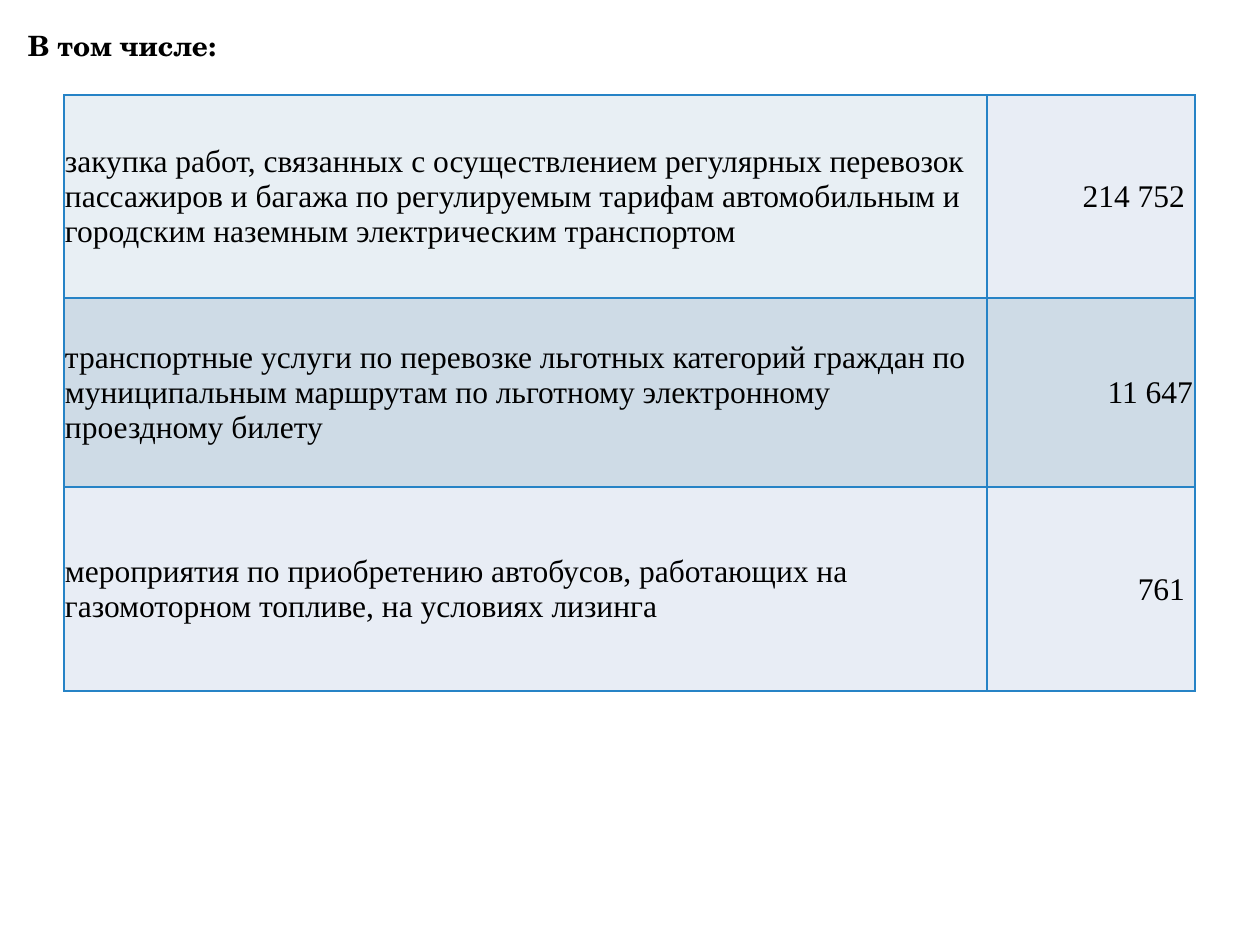
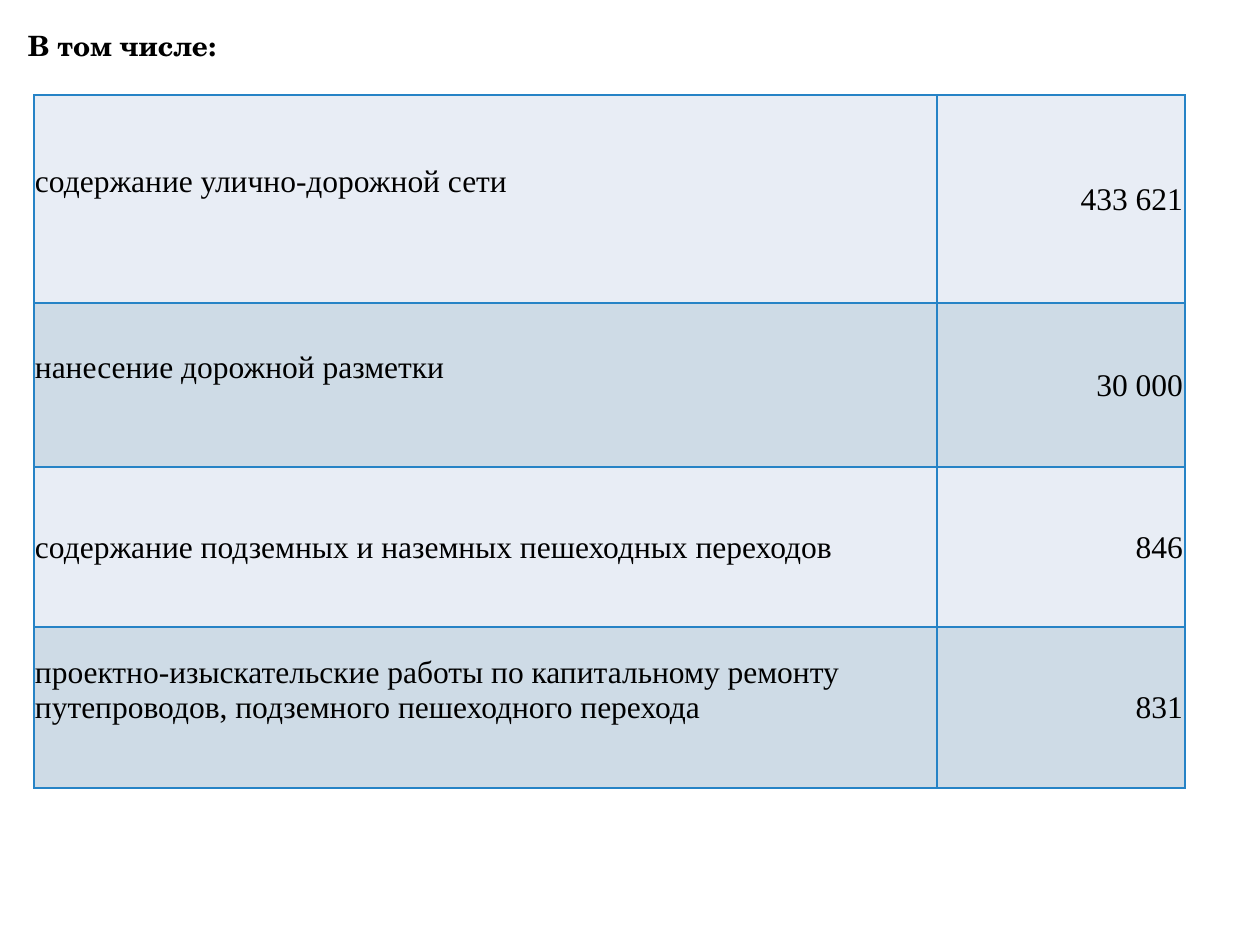
"""Build two budget slides, each with a title and a table of expenses."""
from dataclasses import dataclass

import lxml.etree
import pptx
import pptx.dml.color
import pptx.enum.text
import pptx.oxml.ns
import pptx.util

PX_PER_INCH = 126
BLACK = pptx.dml.color.RGBColor(0x00, 0x00, 0x00)
BORDER = pptx.dml.color.RGBColor(0x26, 0x83, 0xC6)
FIRST = pptx.dml.color.RGBColor(0xE8, 0xEF, 0xF4)
LIGHT = pptx.dml.color.RGBColor(0xE8, 0xED, 0xF5)
DARK = pptx.dml.color.RGBColor(0xCE, 0xDB, 0xE6)
TITLE = "В том числе:"
TITLE_FONT = "TeX Gyre Schola"
BODY_FONT = "Times New Roman"
TABLE_TOP = 95
CELL_INSET = 1
LEFT = pptx.enum.text.PP_ALIGN.LEFT
RIGHT = pptx.enum.text.PP_ALIGN.RIGHT
TOP = pptx.enum.text.MSO_ANCHOR.TOP
MIDDLE = pptx.enum.text.MSO_ANCHOR.MIDDLE


@dataclass(frozen=True)
class Expense:
    label: str
    value: str
    height: int
    fill: pptx.dml.color.RGBColor
    label_fill: pptx.dml.color.RGBColor | None = None
    label_bottom: int = 0
    value_right: int = 2


@dataclass(frozen=True)
class ExpenseTable:
    left: int
    widths: tuple[int, int]
    expenses: tuple[Expense, ...]


TABLES = (
    ExpenseTable(64, (923, 208), (
        Expense("закупка работ, связанных с осуществлением регулярных перевозок "
                "пассажиров и багажа по регулируемым тарифам автомобильным и "
                "городским наземным электрическим транспортом",
                "214 752", 203, LIGHT, label_fill=FIRST, value_right=10),
        Expense("транспортные услуги по перевозке льготных категорий граждан по "
                "муниципальным маршрутам по льготному электронному проездному билету",
                "11 647", 189, DARK),
        Expense("мероприятия по приобретению автобусов, работающих на "
                "газомоторном топливе, на условиях лизинга",
                "761", 204, LIGHT, value_right=10),
    )),
    ExpenseTable(34, (903, 248), (
        Expense("содержание улично-дорожной сети", "433 621", 208, LIGHT,
                label_bottom=35),
        Expense("нанесение дорожной разметки", "30 000", 164, DARK,
                label_bottom=35),
        Expense("содержание подземных и наземных пешеходных переходов",
                "846", 160, LIGHT),
        Expense("проектно-изыскательские работы по капитальному ремонту "
                "путепроводов, подземного пешеходного перехода",
                "831", 161, DARK, label_bottom=35),
    )),
)


def px(n: int) -> pptx.util.Emu:
    return pptx.util.Emu(round(n * 914400 / PX_PER_INCH))


def write(tf, text: str, *, font: str = BODY_FONT, size: int = 18,
          bold: bool = False, align=LEFT, spacing: float = 1.0) -> None:
    p = tf.paragraphs[0]
    p.alignment = align
    p.line_spacing = spacing
    r = p.add_run()
    r.text = text
    r.font.name = font
    r.font.size = pptx.util.Pt(size)
    r.font.bold = bold
    r.font.color.rgb = BLACK


def add_title(s) -> None:
    sp = s.shapes.title
    sp.left, sp.top, sp.width, sp.height = px(0), px(26), px(1260), px(70)
    tf = sp.text_frame
    tf.word_wrap = True
    tf.vertical_anchor = TOP
    tf.margin_left, tf.margin_top = px(28), px(6)
    write(tf, TITLE, font=TITLE_FONT, size=16, bold=True, spacing=0.9)


def set_borders(cell) -> None:
    qn = pptx.oxml.ns.qn
    tc_pr = cell._tc.get_or_add_tcPr()
    for side in ("lnL", "lnR", "lnT", "lnB"):
        ln = lxml.etree.SubElement(tc_pr, qn(f"a:{side}"), w=str(pptx.util.Pt(1)))
        fill = lxml.etree.SubElement(ln, qn("a:solidFill"))
        lxml.etree.SubElement(fill, qn("a:srgbClr"), val=str(BORDER))


def fill_cell(cell, text: str, fill, *, align=LEFT,
              right: int = CELL_INSET, bottom: int = 0) -> None:
    set_borders(cell)
    cell.fill.solid()
    cell.fill.fore_color.rgb = fill
    cell.vertical_anchor = MIDDLE
    cell.margin_left = cell.margin_top = px(CELL_INSET)
    cell.margin_right, cell.margin_bottom = px(right), px(bottom)
    write(cell.text_frame, text, align=align)


def add_expenses(s, spec: ExpenseTable) -> None:
    height = sum(e.height for e in spec.expenses)
    table = s.shapes.add_table(len(spec.expenses), len(spec.widths), px(spec.left),
                               px(TABLE_TOP), px(sum(spec.widths)), px(height)).table
    table.first_row = table.horz_banding = False
    for column, width in zip(table.columns, spec.widths):
        column.width = px(width)
    for row, e in zip(table.rows, spec.expenses):
        row.height = px(e.height)
        label, value = row.cells
        fill_cell(label, e.label, e.label_fill or e.fill, bottom=e.label_bottom)
        fill_cell(value, e.value, e.fill, align=RIGHT, right=e.value_right)


def main() -> None:
    prs = pptx.Presentation()
    prs.slide_width, prs.slide_height = px(1260), px(945)
    for spec in TABLES:
        s = prs.slides.add_slide(prs.slide_layouts.get_by_name("Title Only"))
        add_title(s)
        add_expenses(s, spec)
    prs.save("out.pptx")


if __name__ == "__main__":
    main()
